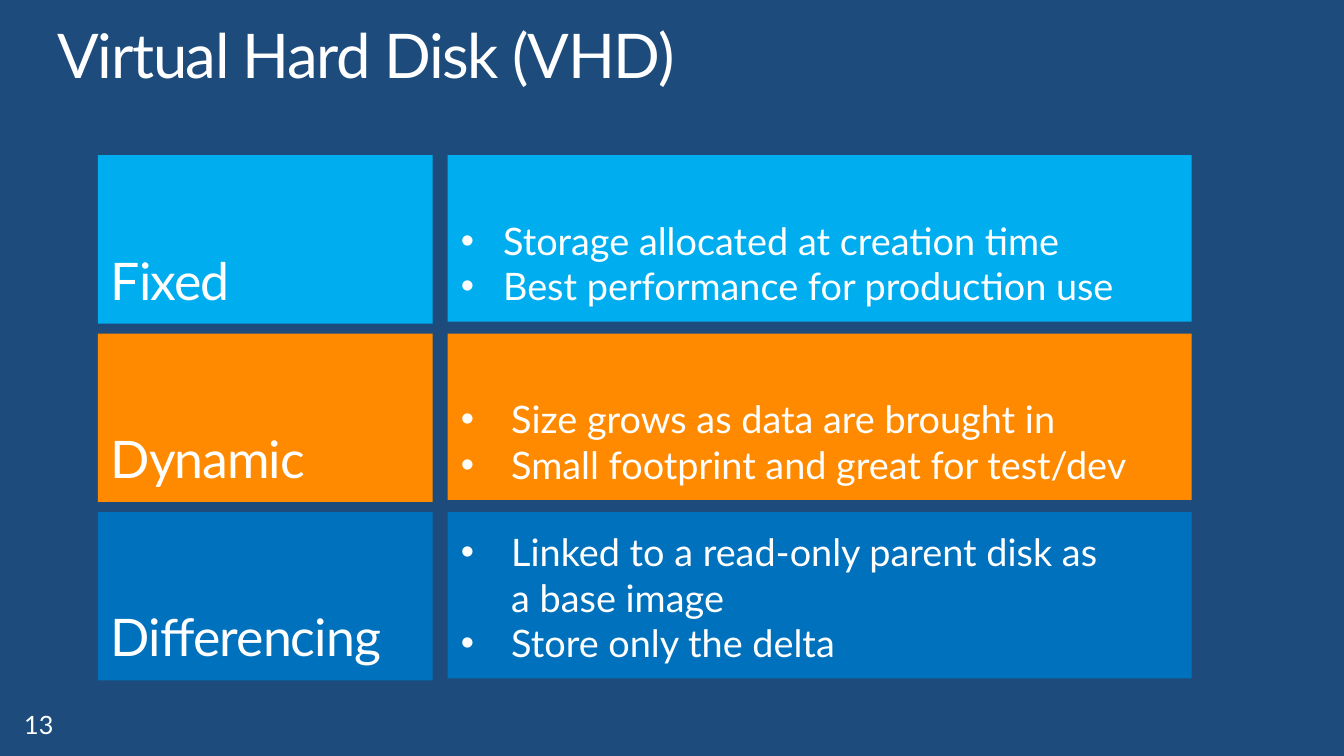
from lxml.etree import SubElement
from pptx import Presentation
from pptx.dml.color import RGBColor
from pptx.enum.shapes import MSO_SHAPE
from pptx.enum.text import MSO_ANCHOR, PP_ALIGN
from pptx.oxml.ns import qn
from pptx.util import Inches, Pt

NAVY = RGBColor(0x1D, 0x4C, 0x7C)
WHITE = RGBColor(0xFF, 0xFF, 0xFF)
CYAN = RGBColor(0x00, 0xAE, 0xEF)
ORANGE = RGBColor(0xFF, 0x8A, 0x00)
BLUE = RGBColor(0x00, 0x71, 0xBC)

FONT = "Lato"
ROW_LEFT, ROW_TOP, ROW_PITCH = 0.97, 1.54, 1.77
NAME_WIDTH, NAME_HEIGHT = 3.32, 1.67
DETAIL_WIDTH, DETAIL_HEIGHT = 7.38, 1.65
GUTTER = 0.15

# Name, colour, bullet indent, points; further lines of a point follow a newline
DISK_TYPES = [
    ("Fixed", CYAN, 0.42,
     ["Storage allocated at creation time",
      "Best performance for production use"]),
    ("Dynamic", ORANGE, 0.5,
     ["Size grows as data are brought in",
      "Small footprint and great for test/dev"]),
    ("Differencing", BLUE, 0.5,
     ["Linked to a read-only parent disk as\na base image",
      "Store only the delta"]),
]


def set_insets(frame, left, top, right, bottom):
    frame.margin_left, frame.margin_top = Inches(left), Inches(top)
    frame.margin_right, frame.margin_bottom = Inches(right), Inches(bottom)


def write(paragraph, text, size, spacing=0):
    """Fill a paragraph; spacing is the letter spacing in points."""
    run = paragraph.add_run()
    run.text = text
    if spacing:
        run._r.get_or_add_rPr().set("spc", str(round(spacing * 100)))
    paragraph.alignment = PP_ALIGN.LEFT
    font = paragraph.font
    font.name, font.size, font.color.rgb = FONT, Pt(size), WHITE


def indent(paragraph, left, bullet):
    """Indent a paragraph, with a hanging bullet if asked for."""
    properties = paragraph._p.get_or_add_pPr()
    properties.set("marL", str(Inches(left)))
    properties.set("indent", str(-Inches(left) if bullet else 0))
    if bullet:
        SubElement(properties, qn("a:buFont")).set("typeface", "Arial")
        SubElement(properties, qn("a:buChar")).set("char", "•")
    else:
        SubElement(properties, qn("a:buNone"))


def add_label(slide, box, text, size, insets, spacing=0):
    frame = slide.shapes.add_textbox(*map(Inches, box)).text_frame
    frame.word_wrap = True
    set_insets(frame, *insets)
    write(frame.paragraphs[0], text, size, spacing)
    return frame


def add_tile(slide, box, color):
    """Add a plain coloured tile and return its bottom-anchored text frame."""
    tile = slide.shapes.add_shape(MSO_SHAPE.RECTANGLE, *map(Inches, box))
    tile.shadow.inherit = False
    tile.fill.solid()
    tile.fill.fore_color.rgb = color
    tile.line.fill.background()
    frame = tile.text_frame
    frame.word_wrap = True
    frame.vertical_anchor = MSO_ANCHOR.BOTTOM
    set_insets(frame, 0.13, 0.07, 0.07, 0.13)
    return frame


def add_disk_row(slide, left, top, name, color, hang, points):
    detail_left = left + NAME_WIDTH + GUTTER
    details = add_tile(slide, (detail_left, top, DETAIL_WIDTH, DETAIL_HEIGHT), color)
    lines = [(line, number == 0) for point in points
             for number, line in enumerate(point.split("\n"))]
    for number, (line, bullet) in enumerate(lines):
        paragraph = details.add_paragraph() if number else details.paragraphs[0]
        paragraph.level = 0 if bullet else 1
        indent(paragraph, hang, bullet)
        write(paragraph, line, 27)
    heading = add_tile(slide, (left, top, NAME_WIDTH, NAME_HEIGHT), color)
    write(heading.paragraphs[0], name, 37, -0.7)


def build_vhd_slide(presentation):
    slide = presentation.slides.add_slide(presentation.slide_layouts[6])
    slide.background.fill.solid()
    slide.background.fill.fore_color.rgb = NAVY
    title = add_label(slide, (0.57, 0.25, 12.19, 0.67), "Virtual Hard Disk (VHD)",
                      44, (0, 0, 0, 0), -1)
    title.paragraphs[0].line_spacing = 0.9
    add_label(slide, (0.11, 6.97, 3.11, 0.4), "13", 18, (0.13, 0.07, 0.13, 0.07))
    for row, disk_type in enumerate(DISK_TYPES):
        add_disk_row(slide, ROW_LEFT, ROW_TOP + row * ROW_PITCH, *disk_type)


def main():
    presentation = Presentation()
    presentation.slide_width = Inches(13.33)
    presentation.slide_height = Inches(7.5)
    build_vhd_slide(presentation)
    presentation.save("out.pptx")


if __name__ == "__main__":
    main()
